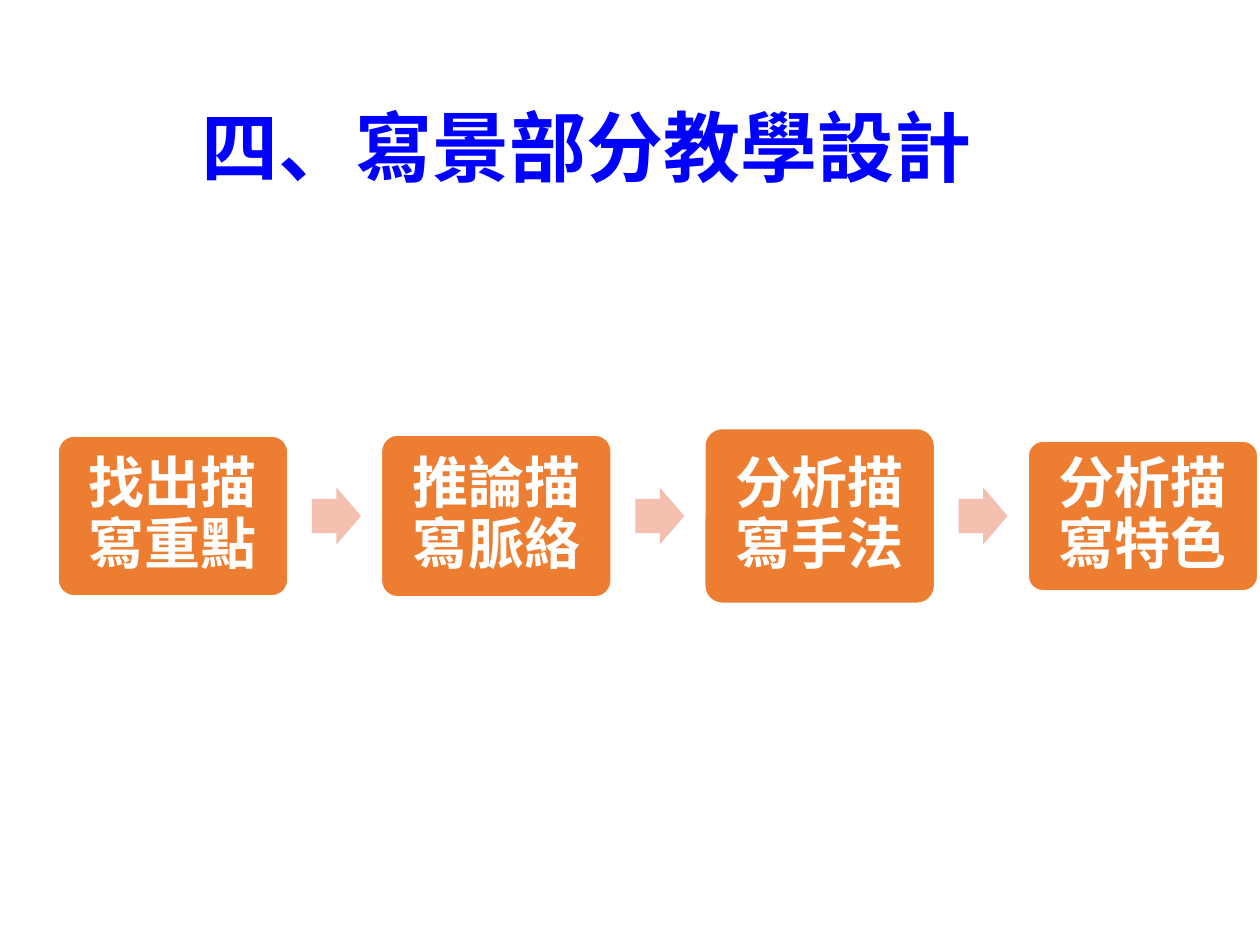
from dataclasses import dataclass

from lxml import etree
from pptx import Presentation
from pptx import util as u
from pptx.dml.color import RGBColor
from pptx.enum import shapes, text
from pptx.oxml import ns


@dataclass(frozen=True)
class Theme:
    """Colours, font and type sizes of the slide."""
    font: str = "Noto Sans CJK SC"
    title: str = "0000FF"
    step: str = "ED7D31"
    arrow: str = "F4BFAE"
    light: str = "FFFFFF"
    title_size: int = 44
    step_size: int = 32


THEME = Theme()
STEPS = [("找出描寫重點", 160), ("推論描寫脈絡", 162),
         ("分析描寫手法", 175), ("分析描寫特色", 150)]


def px(count):
    """Turn pixels into EMU."""
    return u.Emu(round(count * 914400 / 126))


def write(shape, words, *, size, color, inset=(13, 6), spacing=None,
          anchor=text.MSO_ANCHOR.TOP):
    """Put one centred bold paragraph into a shape."""
    frame = shape.text_frame
    frame.word_wrap = True
    frame.vertical_anchor = anchor
    frame.margin_left = frame.margin_right = px(inset[0])
    frame.margin_top = frame.margin_bottom = px(inset[1])
    para = frame.paragraphs[0]
    para.alignment = text.PP_ALIGN.CENTER
    para.line_spacing = spacing
    span = para.add_run()
    span.text = words
    span.font.size = u.Pt(size)
    span.font.bold = True
    span.font.color.rgb = RGBColor.from_string(color)
    span.font.name = THEME.font
    etree.SubElement(span._r.get_or_add_rPr(), ns.qn("a:ea"), typeface=THEME.font)


def add_block(page, kind, box, fill, adjustments):
    """Add a flat filled preset shape without an outline."""
    block = page.shapes.add_shape(kind, *map(px, box))
    block.shadow.inherit = False
    block.fill.solid()
    block.fill.fore_color.rgb = RGBColor.from_string(fill)
    block.line.fill.background()
    for index, value in enumerate(adjustments):
        block.adjustments[index] = value
    return block


def add_title(page, box, words):
    """Add the slide heading."""
    title = page.shapes.add_textbox(*map(px, box))
    write(title, words, size=THEME.title_size, color=THEME.title)


def add_process(page, box, steps):
    """Add a row of steps joined by block arrows, centred on the box height."""
    left, top, width, height = box
    step_width, arrow_width, arrow_height = 230, 49, 57
    pitch = (width - step_width) / (len(steps) - 1)
    middle = top + height / 2
    for index, (words, step_height) in enumerate(steps):
        x = left + index * pitch
        step = add_block(page, shapes.MSO_SHAPE.ROUNDED_RECTANGLE,
                         (x, middle - step_height / 2, step_width, step_height),
                         THEME.step, [0.1])
        step.line.color.rgb = RGBColor.from_string(THEME.light)
        step.line.width = u.Pt(1)
        write(step, words, size=THEME.step_size, color=THEME.light,
              inset=(18, 18), spacing=0.9, anchor=text.MSO_ANCHOR.MIDDLE)
        if index < len(steps) - 1:
            add_block(page, shapes.MSO_SHAPE.RIGHT_ARROW,
                      (x + step_width + 24, middle - arrow_height / 2,
                       arrow_width, arrow_height), THEME.arrow, [0.6, 0.5])


def main():
    """Build and save the deck."""
    deck = Presentation()
    deck.slide_width, deck.slide_height = px(1260), px(945)
    page = deck.slides.add_slide(deck.slide_layouts[6])
    add_title(page, (179, 94, 815, 106), "四、寫景部分教學設計")
    add_process(page, (58, 428, 1200, 176), STEPS)
    deck.save("out.pptx")


if __name__ == "__main__":
    main()
